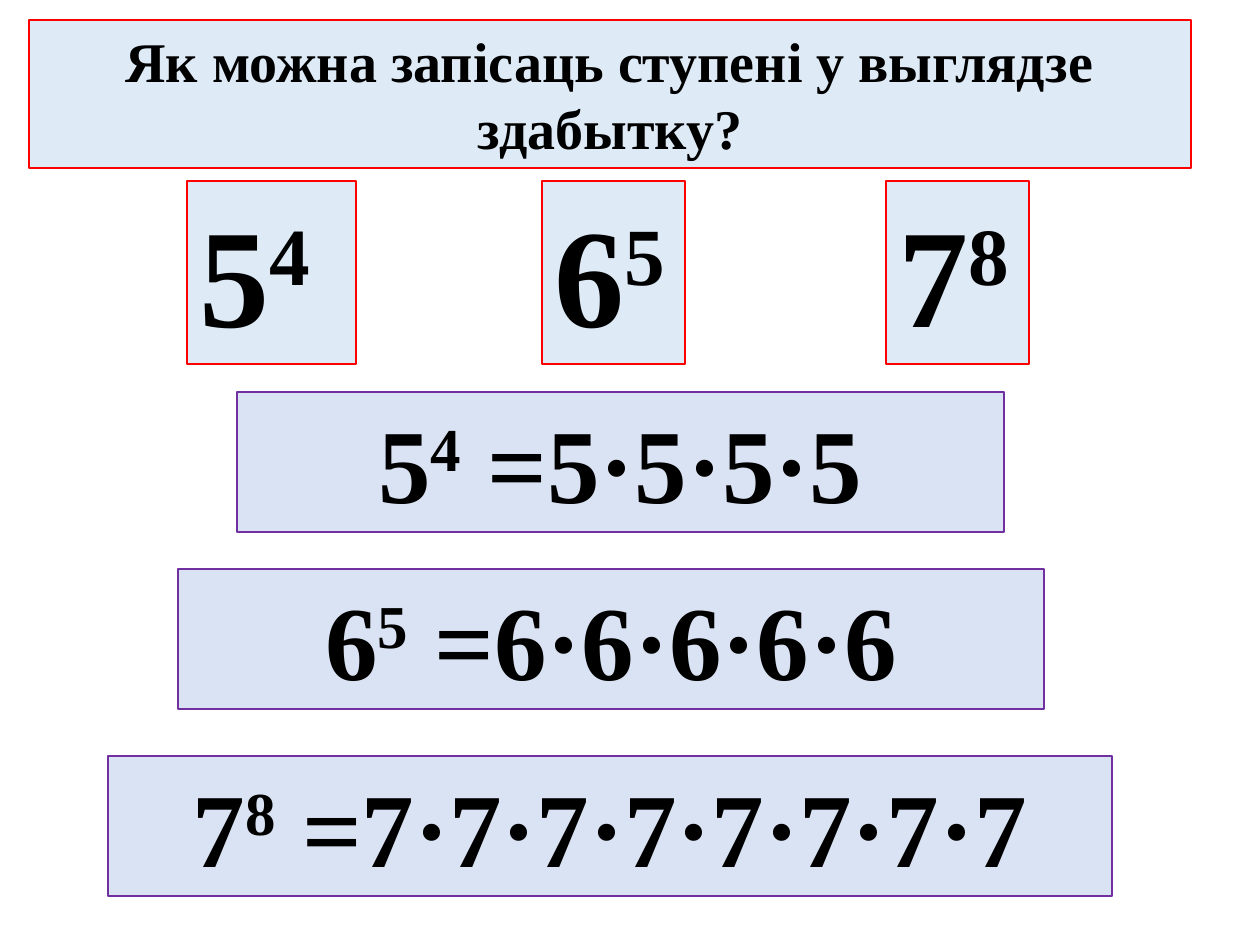
from dataclasses import dataclass

from pptx import Presentation
from pptx.dml.color import RGBColor
from pptx.enum.text import MSO_AUTO_SIZE, PP_ALIGN
from pptx.util import Emu, Pt

EMU_PER_PX = 914400 / 126


@dataclass(frozen=True)
class Theme:
    font: str = "Times New Roman"
    text: str = "000000"
    question_fill: str = "DEEBF7"
    question_line: str = "FF0000"
    answer_fill: str = "DAE3F3"
    answer_line: str = "7030A0"
    line_width: float = 0.75
    title_size: int = 32
    power_size: int = 80
    answer_size: int = 60


THEME = Theme()


def px(length):
    return Emu(round(length * EMU_PER_PX))


def add_box(slide, left, top, width, height, fill, line, wrap=True):
    """Add a filled, outlined text box and return its first paragraph."""
    box = slide.shapes.add_textbox(px(left), px(top), px(width), px(height))
    box.fill.solid()
    box.fill.fore_color.rgb = RGBColor.from_string(fill)
    box.line.color.rgb = RGBColor.from_string(line)
    box.line.width = Pt(THEME.line_width)
    box.text_frame.word_wrap = wrap
    box.text_frame.auto_size = MSO_AUTO_SIZE.SHAPE_TO_FIT_TEXT
    return box.text_frame.paragraphs[0]


def add_run(paragraph, text, size, superscript=False):
    run = paragraph.add_run()
    run.text = text
    run.font.name = THEME.font
    run.font.size = Pt(size)
    run.font.bold = True
    run.font.color.rgb = RGBColor.from_string(THEME.text)
    if superscript:
        run.font._element.set("baseline", "30000")


def add_power(paragraph, base, exponent, size):
    add_run(paragraph, str(base), size)
    add_run(paragraph, str(exponent), size, superscript=True)


def add_title(slide, text):
    paragraph = add_box(slide, 29, 20, 1162, 148,
                        THEME.question_fill, THEME.question_line)
    paragraph.alignment = PP_ALIGN.CENTER
    add_run(paragraph, text, THEME.title_size)


def add_question(slide, base, exponent, left, width, wrap):
    paragraph = add_box(slide, left, 181, width, 183,
                        THEME.question_fill, THEME.question_line, wrap)
    add_power(paragraph, base, exponent, THEME.power_size)


def add_answer(slide, base, exponent, left, top, width):
    """Add a power written out as a product of equal factors."""
    paragraph = add_box(slide, left, top, width, 140,
                        THEME.answer_fill, THEME.answer_line)
    paragraph.alignment = PP_ALIGN.CENTER
    add_power(paragraph, base, exponent, THEME.answer_size)
    product = "·".join([str(base)] * exponent)
    add_run(paragraph, f" ={product}", THEME.answer_size)


def main():
    presentation = Presentation()
    presentation.slide_width = px(1260)
    presentation.slide_height = px(945)
    slide = presentation.slides.add_slide(presentation.slide_layouts[6])

    add_title(slide, "Як можна запісаць ступені у выглядзе здабытку?")
    for base, exponent, left, width, wrap in (
        (5, 4, 187, 169, True),
        (6, 5, 542, 143, False),
        (7, 8, 886, 143, False),
    ):
        add_question(slide, base, exponent, left, width, wrap)
    for base, exponent, left, top, width in (
        (5, 4, 237, 392, 767),
        (6, 5, 178, 569, 866),
        (7, 8, 108, 756, 1004),
    ):
        add_answer(slide, base, exponent, left, top, width)

    presentation.save("out.pptx")


if __name__ == "__main__":
    main()
